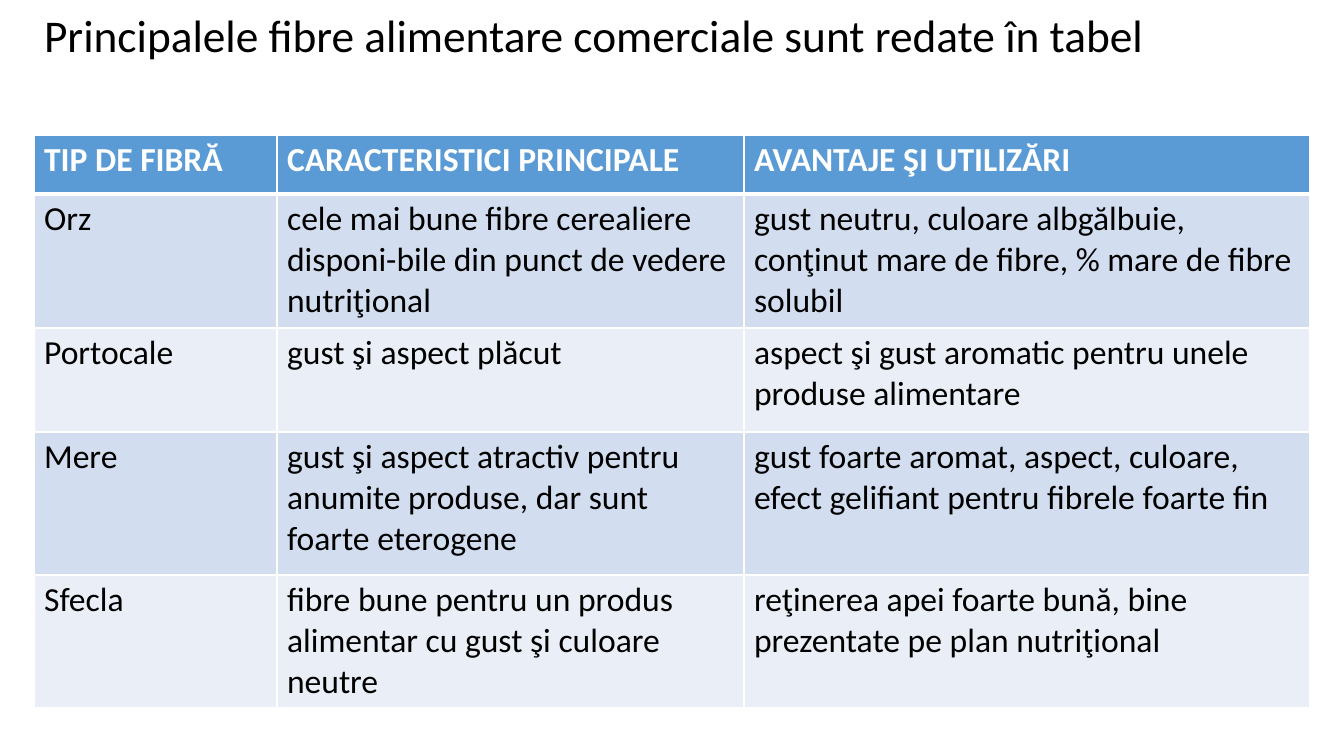
from lxml.etree import SubElement
from pptx import Presentation
from pptx.dml.color import RGBColor
from pptx.enum.text import MSO_ANCHOR, MSO_AUTO_SIZE, PP_ALIGN
from pptx.oxml.ns import qn
from pptx.util import Emu, Pt

COLORS = {"header": "5B9BD5", "odd": "D2DEEF", "even": "EAEFF7",
          "white": "FFFFFF", "black": "000000"}
FONT = "Calibri"
TITLE = "Principalele fibre alimentare comerciale sunt redate în tabel"
COLUMNS = [243, 467, 566]
HEIGHTS = [59, 134, 104, 143, 133]
FIBRES = [
    ("TIP DE FIBRĂ", "CARACTERISTICI PRINCIPALE", "AVANTAJE ŞI UTILIZĂRI"),
    ("Orz", "cele mai bune fibre cerealiere disponi-bile din punct de vedere nutriţional",
     "gust neutru, culoare albgălbuie, conţinut mare de fibre, % mare de fibre solubil"),
    ("Portocale", "gust şi aspect plăcut",
     "aspect şi gust aromatic pentru unele produse alimentare"),
    ("Mere", "gust şi aspect atractiv pentru anumite produse, dar sunt foarte eterogene",
     "gust foarte aromat, aspect, culoare, efect gelifiant pentru fibrele foarte fin"),
    ("Sfecla", "fibre bune pentru un produs alimentar cu gust şi culoare neutre",
     "reţinerea apei foarte bună, bine prezentate pe plan nutriţional"),
]


def px(n):
    """Turn slide pixels into EMU."""
    return Emu(round(n * 914400 / 100.8))


def rgb(name):
    """Look up a palette colour."""
    return RGBColor.from_string(COLORS[name])


def style(p, size, color, bold=False):
    """Set the font of a paragraph."""
    font = p.font
    font.name, font.size, font.bold = FONT, Pt(size), bold
    font.color.rgb = rgb(color)


def add_borders(cell, top, bottom):
    """Draw white cell borders, with the given top and bottom widths in points."""
    tcPr = cell._tc.get_or_add_tcPr()
    widths = {"a:lnL": 1, "a:lnR": 1, "a:lnT": top, "a:lnB": bottom}
    for tag, width in widths.items():
        ln = SubElement(tcPr, qn(tag), w=str(Pt(width)))
        fill = SubElement(ln, qn("a:solidFill"))
        SubElement(fill, qn("a:srgbClr"), val=COLORS["white"])


def add_title(s, x, y, w, h):
    """Place and format the title placeholder."""
    sp = s.shapes.title
    sp.left, sp.top, sp.width, sp.height = map(px, (x, y, w, h))
    tf = sp.text_frame
    tf.text = TITLE
    tf.word_wrap = True
    tf.auto_size = MSO_AUTO_SIZE.NONE
    tf.vertical_anchor = MSO_ANCHOR.MIDDLE
    p = tf.paragraphs[0]
    p.alignment = PP_ALIGN.LEFT
    p.line_spacing = 0.9
    style(p, 32.4, "black")


def add_fibre_table(s, x, y, w, h):
    """Fill the box with the table of fibres."""
    table = s.shapes.add_table(len(FIBRES), len(COLUMNS), px(x), px(y), px(w), px(h)).table
    for column, width in zip(table.columns, COLUMNS):
        column.width = px(width)
    for i, (row, height, texts) in enumerate(zip(table.rows, HEIGHTS, FIBRES)):
        row.height = px(height)
        header = i == 0
        band = "header" if header else "odd" if i % 2 else "even"
        for cell, text in zip(row.cells, texts):
            cell.text = text
            style(cell.text_frame.paragraphs[0], 24, "white" if header else "black", header)
            add_borders(cell, 3 if i == 1 else 1, 3 if header else 1)
            cell.fill.solid()
            cell.fill.fore_color.rgb = rgb(band)


def main():
    """Build and save the slide."""
    prs = Presentation()
    prs.slide_width, prs.slide_height = px(1344), px(756)
    s = prs.slides.add_slide(prs.slide_layouts[5])
    add_title(s, 34, 13, sum(COLUMNS), 50)
    add_fibre_table(s, 34, 135, sum(COLUMNS), sum(HEIGHTS))
    prs.save("out.pptx")


if __name__ == "__main__":
    main()
